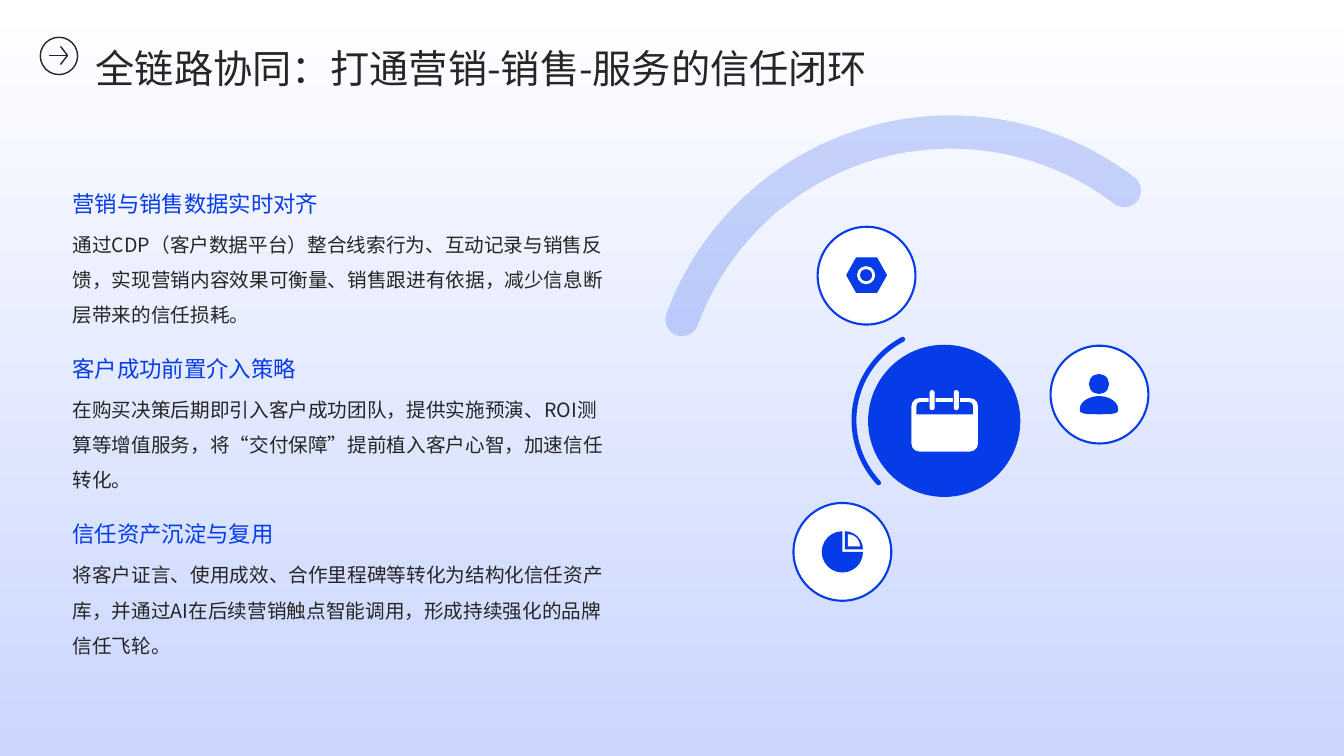
from math import cos, pi, sin

from lxml.etree import SubElement
from pptx import Presentation
from pptx.dml.color import RGBColor
from pptx.enum.shapes import MSO_CONNECTOR, MSO_SHAPE
from pptx.enum.text import MSO_ANCHOR, MSO_AUTO_SIZE, PP_ALIGN
from pptx.oxml.ns import qn
from pptx.util import Inches, Pt

BLUE, WHITE, DARK = "063CE8", "FFFFFF", "262626"
FONT = "Noto Sans CJK SC"


def paint(color_format, color):
    color_format.rgb = RGBColor.from_string(color)


def write(shape, text, size=14, color=DARK, spacing=1.5, anchor=MSO_ANCHOR.TOP):
    frame = shape.text_frame
    frame.word_wrap = True
    frame.auto_size = MSO_AUTO_SIZE.NONE
    frame.vertical_anchor = anchor
    frame.margin_left = frame.margin_right = frame.margin_top = frame.margin_bottom = 0
    paragraph = frame.paragraphs[0]
    paragraph.alignment = PP_ALIGN.LEFT
    paragraph.line_spacing = spacing
    paragraph.space_before = Pt(0)
    run = paragraph.add_run()
    run.text = text
    run.font.size = Pt(size)
    paint(run.font.color, color)
    run.font.name = FONT
    SubElement(run.font._element, qn("a:ea"), typeface=FONT)


presentation = Presentation()
presentation.slide_width = Inches(13.33)
presentation.slide_height = Inches(7.5)
slide = presentation.slides.add_slide(presentation.slide_layouts[5])
shapes = slide.shapes

# Background gradient, white at the top
background = slide.background.fill
background.gradient()
background.gradient_angle = 270
for stop, color in zip(background.gradient_stops, (WHITE, "CAD6FE")):
    paint(stop.color, color)

# Title
title = shapes.title
title.left, title.top = Inches(0.95), Inches(0.3)
title.width, title.height = Inches(11.35), Inches(0.59)
write(title, "全链路协同：打通营销-销售-服务的信任闭环", size=28, spacing=1.3)

# Three headings with their explanations
sections = [
    ("营销与销售数据实时对齐",
     "通过CDP（客户数据平台）整合线索行为、互动记录与销售反馈，实现营销内容效果可衡量、"
     "销售跟进有依据，减少信息断层带来的信任损耗。"),
    ("客户成功前置介入策略",
     "在购买决策后期即引入客户成功团队，提供实施预演、ROI测算等增值服务，"
     "将“交付保障”提前植入客户心智，加速信任转化。"),
    ("信任资产沉淀与复用",
     "将客户证言、使用成效、合作里程碑等转化为结构化信任资产库，"
     "并通过AI在后续营销触点智能调用，形成持续强化的品牌信任飞轮。"),
]
for index, (heading, body) in enumerate(sections):
    top = 1.61 + 1.64 * index
    heading_box = shapes.add_textbox(Inches(0.72), Inches(top), Inches(5.39), Inches(0.54))
    write(heading_box, heading, size=16, color=BLUE, anchor=MSO_ANCHOR.BOTTOM)
    body_box = shapes.add_textbox(Inches(0.72), Inches(top + 0.58), Inches(5.39), Inches(1.09))
    write(body_box, body)

# Arcs: left, top, diameter, start angle, end angle, line width, opacity
for left, top, diameter, start, end, width, opacity in [
    (6.59, 1.31, 5.68, 200.2, 307.3, 23.75, 20),
    (8.47, 3.26, 1.82, 137, 242.1, 3.5, 100),
]:
    arc = shapes.add_shape(MSO_SHAPE.ARC, Inches(left), Inches(top),
                           Inches(diameter), Inches(diameter))
    arc.shadow.inherit = False
    arc.fill.background()
    # Angles are stored in 60000ths of a degree, adjustments in 100000ths
    arc.adjustments[0], arc.adjustments[1] = start * 0.6, end * 0.6
    paint(arc.line.color, BLUE)
    arc.line.width = Pt(width)
    line = arc.line._get_or_add_ln()
    line.set("cap", "rnd")
    color_element = line.find(qn("a:solidFill")).find(qn("a:srgbClr"))
    SubElement(color_element, qn("a:alpha"), val=str(opacity * 1000))

# Circles and icon parts: preset, box, fill, line colour, line width, adjustments
OVAL, BOX, ROUND, PIE = MSO_SHAPE.OVAL, MSO_SHAPE.RECTANGLE, MSO_SHAPE.ROUNDED_RECTANGLE, MSO_SHAPE.PIE
parts = [(OVAL, (8.61, 3.42, 1.51, 1.51), BLUE, None, 0, ())]
parts += [(OVAL, (left, top, 0.97, 0.97), WHITE, BLUE, 1.5, ())
          for left, top in ((8.11, 2.25), (10.42, 3.43), (7.87, 4.99))]
# Calendar
parts += [
    (ROUND, (9.04, 3.95, 0.66, 0.53), WHITE, None, 0, (0.15,)),
    (MSO_SHAPE.ROUND_2_SAME_RECTANGLE, (9.09, 3.99, 0.56, 0.12), BLUE, None, 0, (0.3, 0)),
]
for ring_left in (9.22, 9.46):
    parts += [
        (BOX, (ring_left - 0.01, 3.94, 0.07, 0.06), BLUE, None, 0, ()),
        (ROUND, (ring_left, 3.87, 0.05, 0.2), WHITE, None, 0, (0.5,)),
    ]
# Hexagonal nut, person's head, pie chart
parts += [
    (MSO_SHAPE.HEXAGON, (8.4, 2.56, 0.39, 0.34), BLUE, BLUE, 1, (0.28,)),
    (OVAL, (8.5, 2.64, 0.18, 0.18), WHITE, None, 0, ()),
    (OVAL, (8.53, 2.67, 0.12, 0.12), BLUE, None, 0, ()),
    (OVAL, (10.8, 3.71, 0.2, 0.2), BLUE, None, 0, ()),
    (PIE, (8.15, 5.27, 0.41, 0.41), BLUE, None, 0, (0, 162)),
    (PIE, (8.2, 5.27, 0.36, 0.36), BLUE, None, 0, (162, 0)),
    (PIE, (8.29, 5.3, 0.24, 0.24), WHITE, None, 0, (162, 0)),
    # Ring of the title arrow
    (OVAL, (0.4, 0.37, 0.37, 0.37), None, DARK, 1, ()),
]
for preset, box, fill, line_color, width, adjustments in parts:
    shape = shapes.add_shape(preset, *map(Inches, box))
    shape.shadow.inherit = False
    for index, value in enumerate(adjustments):
        shape.adjustments[index] = value
    if fill:
        shape.fill.solid()
        paint(shape.fill.fore_color, fill)
    else:
        shape.fill.background()
    if line_color:
        paint(shape.line.color, line_color)
        shape.line.width = Pt(width)
    else:
        shape.line.fill.background()

# Person's shoulders: a dome above, a flat base with round corners below
outline = []
for step in range(48):
    angle = pi + 2 * pi * step / 48
    x, y = cos(angle), sin(angle)
    if y > 0:
        x, y = abs(x) ** 0.6 * (1 if x > 0 else -1), y ** 0.6
    outline.append((Inches(10.9 + 0.19 * x), Inches(4.06 + (0.05 if y > 0 else 0.13) * y)))
builder = shapes.build_freeform(*outline[0])
builder.add_line_segments(outline[1:], close=True)
shoulders = builder.convert_to_shape()
shoulders.shadow.inherit = False
shoulders.fill.solid()
paint(shoulders.fill.fore_color, BLUE)
shoulders.line.fill.background()

# Title arrow
for start_x, start_y in ((0.49, 0.55), (0.6, 0.64), (0.6, 0.46)):
    stroke = shapes.add_connector(MSO_CONNECTOR.STRAIGHT, Inches(start_x), Inches(start_y),
                                  Inches(0.67), Inches(0.55))
    paint(stroke.line.color, DARK)
    stroke.line.width = Pt(1)
    SubElement(stroke._element.spPr, qn("a:effectLst"))

presentation.save("out.pptx")
